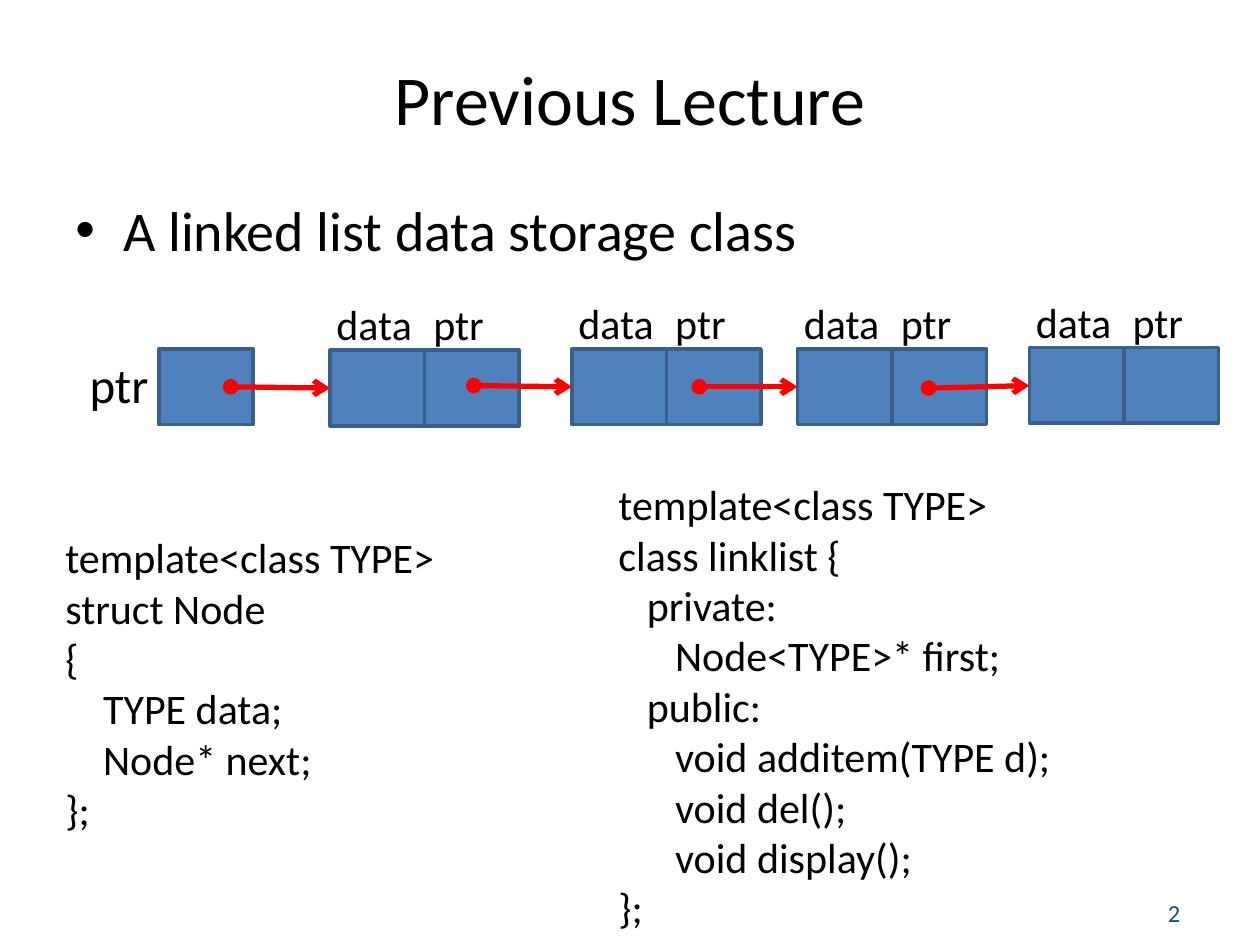
from lxml import etree
from pptx import Presentation
from pptx.dml.color import RGBColor
from pptx.enum.shapes import MSO_CONNECTOR, MSO_SHAPE
from pptx.enum.text import MSO_ANCHOR, PP_ALIGN
from pptx.oxml.ns import qn
from pptx.util import Inches, Pt

STRAIGHT = MSO_CONNECTOR.STRAIGHT
RECTANGLE = MSO_SHAPE.RECTANGLE
TOP, MIDDLE = MSO_ANCHOR.TOP, MSO_ANCHOR.MIDDLE
LEFT, CENTER = PP_ALIGN.LEFT, PP_ALIGN.CENTER

FONT = "Calibri"
CELL_WIDTH, CELL_HEIGHT = 0.75, 0.6
LABEL_WIDTH = 0.96
LEFT_SIDE = 1
SPACE_WIDTH = 0.075

NODES = [(2.62, 2.78), (4.54, 2.77), (6.33, 2.77), (8.17, 2.76)]
ARROW_STARTS = [(1.83, 3.07), (3.76, 3.06), (5.55, 3.07), (7.37, 3.08)]

NODE_CODE = [
    (0, "template<class TYPE>"),
    (0, "struct Node"),
    (0, "{"),
    (4, "TYPE data;"),
    (4, "Node* next;"),
    (0, "};"),
]
LIST_CODE = [
    (0, "template<class TYPE>"),
    (0, "class linklist {"),
    (3, "private:"),
    (6, "Node<TYPE>* first;"),
    (3, "public:"),
    (6, "void additem(TYPE d);"),
    (6, "void del();"),
    (6, "void display();"),
    (0, "};"),
]


def rgb(value):
    """Return the colour for a hex string."""
    return RGBColor.from_string(value)


def set_indent(paragraph, margin, first_line=0):
    """Set the left margin and first line indent of a paragraph in inches."""
    properties = paragraph._p.get_or_add_pPr()
    properties.set("marL", str(Inches(margin)))
    properties.set("indent", str(Inches(first_line)))
    return properties


def write(paragraph, text, size=24, color="000000", align=LEFT):
    """Write formatted text into a paragraph."""
    paragraph.alignment = align
    run = paragraph.add_run()
    run.text = text
    run.font.name = FONT
    run.font.size = Pt(size)
    run.font.color.rgb = rgb(color)


def add_frame(slide, left, top, width, height, anchor=TOP):
    """Add an empty wrapping text box and return its text frame."""
    box = slide.shapes.add_textbox(Inches(left), Inches(top), Inches(width), Inches(height))
    frame = box.text_frame
    frame.word_wrap = True
    frame.vertical_anchor = anchor
    return frame


def add_label(slide, text, left, top, width, height, **text_format):
    """Add one vertically centred line of text."""
    frame = add_frame(slide, left, top, width, height, MIDDLE)
    write(frame.paragraphs[0], text, **text_format)


def add_bullet(slide, text, left, top, width, height, **text_format):
    """Add a bulleted line of text."""
    paragraph = add_frame(slide, left, top, width, height).paragraphs[0]
    write(paragraph, text, **text_format)
    properties = set_indent(paragraph, 0.38, -0.38)
    etree.SubElement(properties, qn("a:buFont"), typeface="Arial")
    etree.SubElement(properties, qn("a:buChar"), char="•")
    paragraph.space_before = Pt(6.4)


def add_code(slide, lines, left, top, width, height):
    """Add a code listing from pairs of indent columns and text."""
    frame = add_frame(slide, left, top, width, height)
    for index, (columns, text) in enumerate(lines):
        paragraph = frame.add_paragraph() if index else frame.paragraphs[0]
        write(paragraph, text)
        set_indent(paragraph, columns * SPACE_WIDTH)


def add_cell(slide, left, top):
    """Add one memory cell and return it."""
    cell = slide.shapes.add_shape(
        RECTANGLE, Inches(left), Inches(top), Inches(CELL_WIDTH), Inches(CELL_HEIGHT))
    cell.shadow.inherit = False
    cell.fill.solid()
    cell.fill.fore_color.rgb = rgb("4F81BD")
    cell.line.color.rgb = rgb("3A5F8C")
    cell.line.width = Pt(2)
    return cell


def add_node(slide, left, top):
    """Add a labelled list node and return its data cell."""
    add_cell(slide, left + CELL_WIDTH, top)
    data_cell = add_cell(slide, left, top)
    for text, offset in (("ptr", 0.54), ("data", -0.13)):
        add_label(slide, text, left + offset, top - 0.51, LABEL_WIDTH, CELL_HEIGHT, align=CENTER)
    return data_cell


def add_pointer(slide, start, target):
    """Add an arrow from a start point to the left side of a cell."""
    x, y = (Inches(value) for value in start)
    pointer = slide.shapes.add_connector(STRAIGHT, x, y, target.left, y)
    pointer.end_connect(target, LEFT_SIDE)
    pointer.line.color.rgb = rgb("FF0000")
    pointer.line.width = Pt(3)
    line = pointer.line._get_or_add_ln()
    etree.SubElement(line, qn("a:headEnd"), type="oval")
    etree.SubElement(line, qn("a:tailEnd"), type="arrow")
    etree.SubElement(pointer._element.spPr, qn("a:effectLst"))


def main():
    """Build the linked list slide and save it."""
    deck = Presentation()
    deck.slide_width, deck.slide_height = Inches(10), Inches(7.5)
    slide = deck.slides.add_slide(deck.slide_layouts[6])

    add_label(slide, "2", 9.17, 7.08, 0.67, 0.33, size=14, color="1F497D")
    add_label(slide, "Previous Lecture", 0.5, 0.38, 9, 0.78, size=40, align=CENTER)
    add_bullet(slide, "A linked list data storage class", 0.5, 1.5, 9, 0.75, size=32)

    add_label(slide, "ptr", 0.53, 2.75, 0.83, CELL_HEIGHT, size=28, align=CENTER)
    add_cell(slide, 1.26, 2.77)
    data_cells = [add_node(slide, left, top) for left, top in NODES]
    for start, data_cell in zip(ARROW_STARTS, data_cells):
        add_pointer(slide, start, data_cell)

    add_code(slide, NODE_CODE, 0.42, 4.17, 3.42, 2.52)
    add_code(slide, LIST_CODE, 4.81, 3.75, 3.71, 3.74)
    deck.save("out.pptx")


if __name__ == "__main__":
    main()
